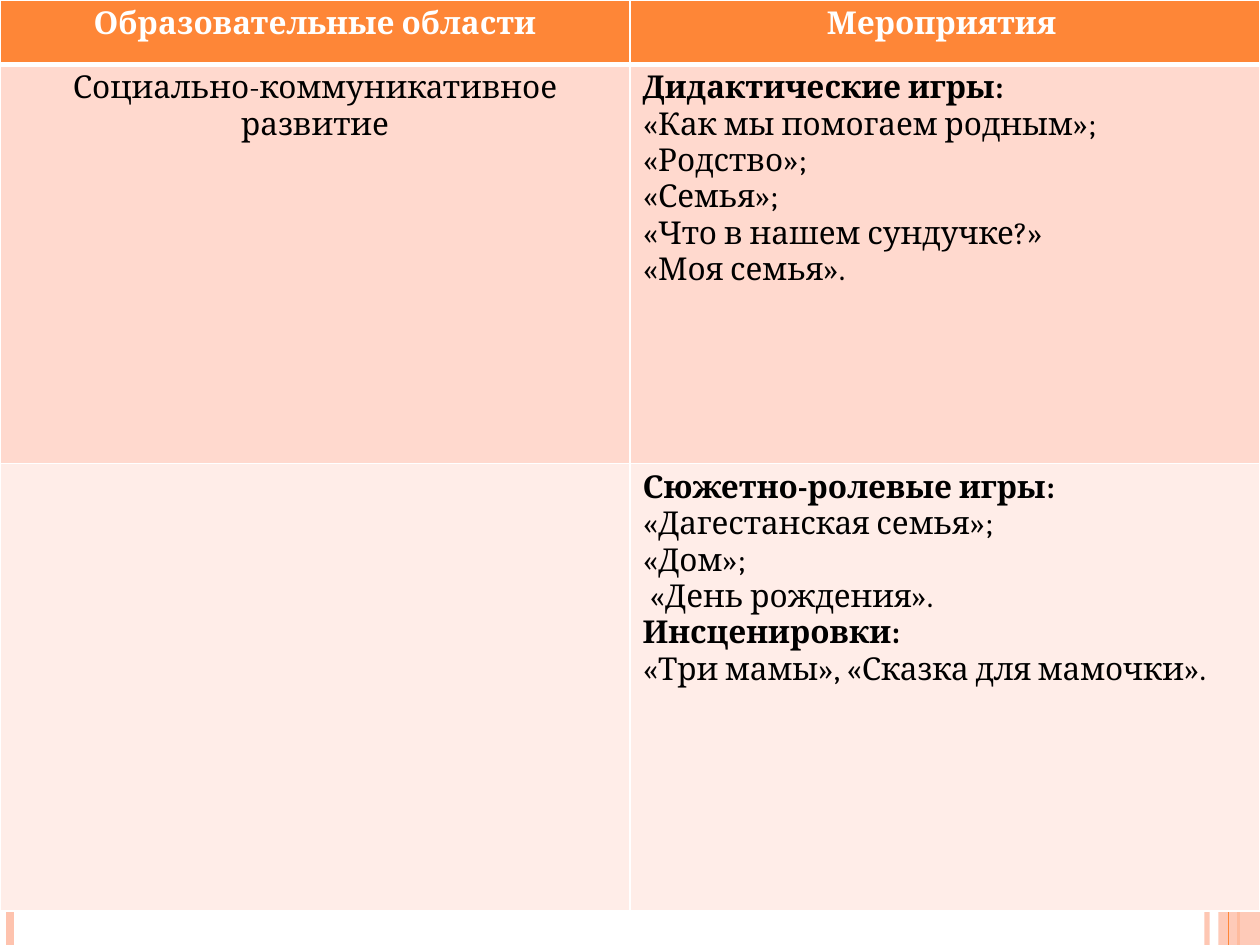
from dataclasses import dataclass

from lxml import etree
from pptx import Presentation
from pptx.dml.color import RGBColor
from pptx.enum.shapes import MSO_CONNECTOR, MSO_SHAPE
from pptx.enum.text import PP_ALIGN
from pptx.oxml.ns import qn
from pptx.util import Inches, Pt

STRAIGHT = MSO_CONNECTOR.STRAIGHT
RECT = MSO_SHAPE.RECTANGLE
CENTER, LEFT = PP_ALIGN.CENTER, PP_ALIGN.LEFT


@dataclass(frozen=True)
class Theme:
    font: str = "Cambria"
    size: int = 18
    accent: str = "FE8637"
    pale: str = "FEC3AE"
    band_dark: str = "FFD9CE"
    band_light: str = "FFEDE8"
    white: str = "FFFFFF"
    black: str = "000000"


THEME = Theme()
HEADERS = ["Образовательные области", "Мероприятия "]
ROWS = [
    (["Социально-коммуникативное развитие"],
     ["Дидактические игры:", "«Как мы помогаем родным»;", "«Родство»;",
      "«Семья»;", "«Что в нашем сундучке?»", "«Моя семья»."]),
    ([""],
     ["Сюжетно-ролевые игры:", "«Дагестанская семья»;", "«Дом»;",
      " «День рождения».", "Инсценировки:",
      "«Три мамы», «Сказка для мамочки»."]),
]
ROW_HEIGHTS = [0.51, 3.17, 3.55]


def rgb(value):
    return RGBColor.from_string(value)


def set_alpha(fill_format_element, percent):
    color = next(fill_format_element.iter(qn("a:srgbClr")))
    etree.SubElement(color, qn("a:alpha"), val=str(percent * 1000))


def add_rule(slide, x, top, height, color, width, alpha=100):
    line = slide.shapes.add_connector(
        STRAIGHT, Inches(x), Inches(top), Inches(x), Inches(top + height))
    line.line.color.rgb = rgb(color)
    line.line.width = Pt(width)
    sp_pr = line._element.spPr
    if alpha < 100:
        set_alpha(sp_pr, alpha)
    etree.SubElement(sp_pr, qn("a:effectLst"))


def add_side_stripes(slide, left, top, width, height):
    right = left + width
    add_rule(slide, right - 0.42, top, height, THEME.pale, 3, 93)
    add_rule(slide, left + 0.08, top, height, THEME.pale, 4.5)
    add_rule(slide, right - 0.17, top, height, THEME.accent, 1.5)
    band = slide.shapes.add_shape(
        RECT, Inches(right - 0.33), Inches(top), Inches(0.33), Inches(height))
    band.shadow.inherit = False
    band.fill.solid()
    band.fill.fore_color.rgb = rgb(THEME.pale)
    set_alpha(band._element.spPr, 87)
    band.line.fill.background()
    add_rule(slide, right - 0.25, top, height, THEME.accent, 0.75)


def set_borders(cell, bottom):
    tc_pr = cell._tc.get_or_add_tcPr()
    widths = {"lnL": 1, "lnR": 1, "lnT": 1, "lnB": bottom}
    for i, (tag, width) in enumerate(widths.items()):
        ln = etree.Element(qn(f"a:{tag}"), w=str(Pt(width)))
        fill = etree.SubElement(ln, qn("a:solidFill"))
        etree.SubElement(fill, qn("a:srgbClr"), val=THEME.white)
        tc_pr.insert(i, ln)


def fill_cell(cell, lines, fill, color, align, header=False):
    cell.fill.solid()
    cell.fill.fore_color.rgb = rgb(fill)
    set_borders(cell, 3 if header else 1)
    tf = cell.text_frame
    tf.text = "\n".join(lines)
    for p in tf.paragraphs:
        p.alignment = align
        p.font.size = Pt(THEME.size)
        for r in p.runs:
            r.font.name = THEME.font
            r.font.size = Pt(THEME.size)
            r.font.bold = header or r.text.endswith(":")
            r.font.color.rgb = rgb(color)


def add_activity_table(slide, left, top, width, height):
    table = slide.shapes.add_table(
        len(ROWS) + 1, len(HEADERS), Inches(left), Inches(top),
        Inches(width), Inches(height)).table
    for column in table.columns:
        column.width = Inches(width / len(HEADERS))
    for row, row_height in zip(table.rows, ROW_HEIGHTS):
        row.height = Inches(row_height)
    for col, text in enumerate(HEADERS):
        fill_cell(table.cell(0, col), [text], THEME.accent, THEME.white,
                  CENTER, header=True)
    bands = [THEME.band_dark, THEME.band_light]
    for i, (cells, band) in enumerate(zip(ROWS, bands), start=1):
        for col, (lines, align) in enumerate(zip(cells, (CENTER, LEFT))):
            fill_cell(table.cell(i, col), lines, band, THEME.black, align)


def main():
    prs = Presentation()
    prs.slide_width, prs.slide_height = Inches(10), Inches(7.5)
    slide = prs.slides.add_slide(prs.slide_layouts[6])
    add_side_stripes(slide, 0, 0, 10, 7.5)
    add_activity_table(slide, 0, 0, 10, sum(ROW_HEIGHTS))
    prs.save("out.pptx")


if __name__ == "__main__":
    main()
